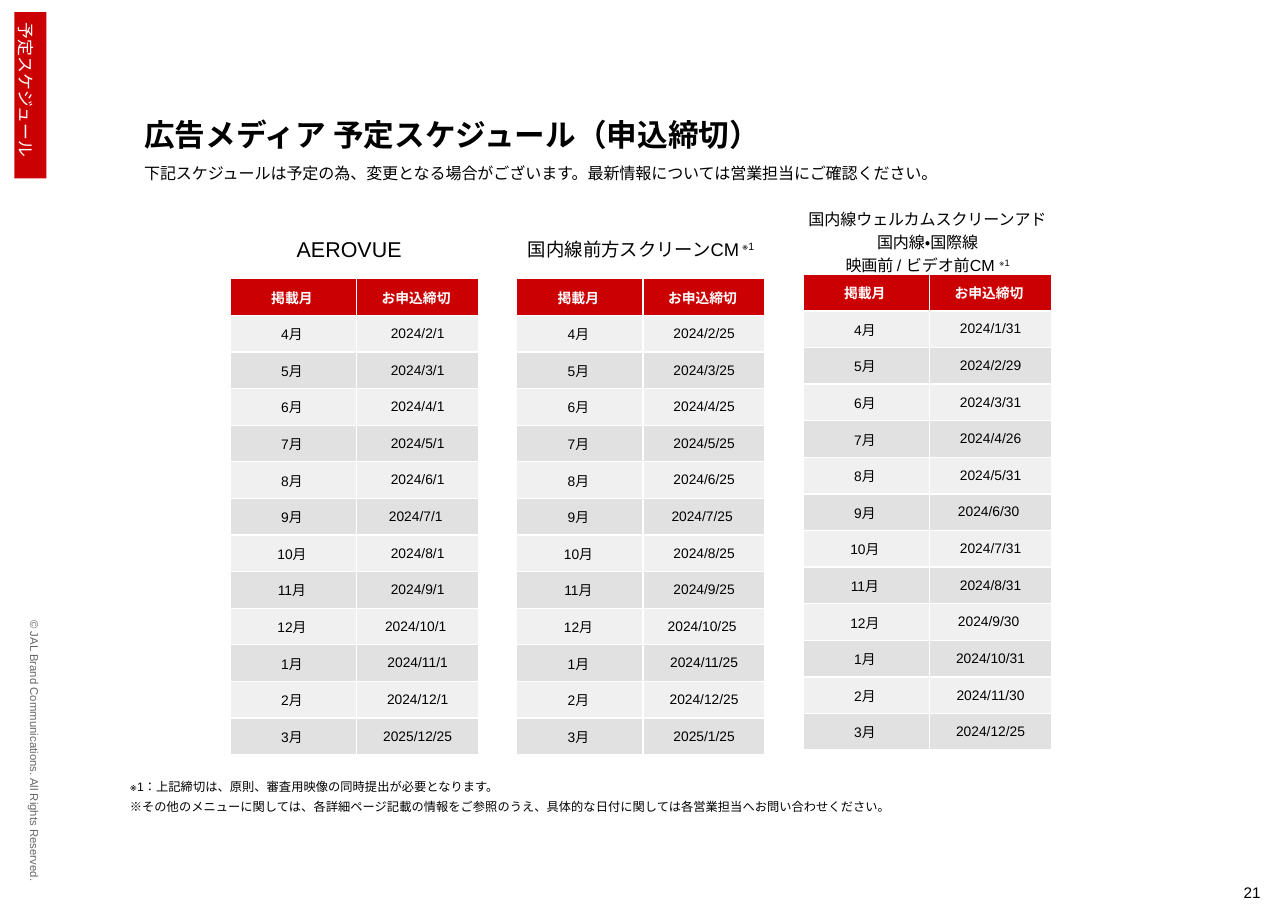
"""Builds the advertising media application deadline schedule slide."""
import pptx
import pptx.dml.color
import pptx.enum.lang
import pptx.enum.shapes
import pptx.enum.text
import pptx.oxml
import pptx.oxml.ns
import pptx.util

Pt = pptx.util.Pt
RGBColor = pptx.dml.color.RGBColor
ALIGN = pptx.enum.text.PP_ALIGN
ANCHOR = pptx.enum.text.MSO_ANCHOR
AUTO_SIZE = pptx.enum.text.MSO_AUTO_SIZE

RED = RGBColor(0xCB, 0x00, 0x03)
WHITE = RGBColor(0xFF, 0xFF, 0xFF)
BLACK = RGBColor(0x00, 0x00, 0x00)
GRAY = RGBColor(0x66, 0x66, 0x66)
BANDS = (RGBColor(0xF0, 0xF0, 0xF0), RGBColor(0xE1, 0xE1, 0xE1))

TABLE_LEFT = 150.5
TABLE_STEP = 187.2
COLUMN_WIDTHS = (82.6, 79.7)
ROW_HEIGHT = 23.93
HEADER = ("掲載月 ", "お申込締切 ")
MONTHS = [f"{month}月 " for month in (*range(4, 13), 1, 2, 3)]
MAGAZINE_DATES = (
    "2024/2/1", "2024/3/1", "2024/4/1", "2024/5/1", "2024/6/1", "2024/7/1 ",
    "2024/8/1", "2024/9/1", "2024/10/1 ", "2024/11/1", "2024/12/1", "2025/12/25")
FRONT_SCREEN_DATES = (
    "2024/2/25", "2024/3/25", "2024/4/25", "2024/5/25", "2024/6/25", "2024/7/25 ",
    "2024/8/25", "2024/9/25", "2024/10/25 ", "2024/11/25", "2024/12/25", "2025/1/25")
WELCOME_SCREEN_DATES = (
    "2024/1/31", "2024/2/29", "2024/3/31", "2024/4/26", "2024/5/31", "2024/6/30 ",
    "2024/7/31", "2024/8/31", "2024/9/30 ", "2024/10/31", "2024/11/30", "2024/12/25")
SCHEDULES = (
    (182.2, MAGAZINE_DATES),
    (182.2, FRONT_SCREEN_DATES),
    (179.3, WELCOME_SCREEN_DATES),
)


def add_run(paragraph, text, size, color=BLACK, bold=False, raised=False):
    run = paragraph.add_run()
    run.text = text
    run.font.name = "Arial"
    run.font.size = Pt(size)
    run.font.bold = bold
    run.font.color.rgb = color
    run.font.language_id = pptx.enum.lang.MSO_LANGUAGE_ID.JAPANESE
    if raised:
        run._r.get_or_add_rPr().set("baseline", "30000")


def place(shape, left, top, width, height):
    shape.left, shape.top = Pt(left), Pt(top)
    shape.width, shape.height = Pt(width), Pt(height)


def fill_frame(frame, lines, size, color=BLACK, bold=False, align=ALIGN.LEFT,
               spacing=1.0, anchor=ANCHOR.TOP, auto_size=AUTO_SIZE.SHAPE_TO_FIT_TEXT):
    frame.word_wrap = True
    frame.auto_size = auto_size
    frame.vertical_anchor = anchor
    for index, (text, mark) in enumerate(lines):
        paragraph = frame.add_paragraph() if index else frame.paragraphs[0]
        paragraph.alignment = align
        paragraph.line_spacing = spacing
        add_run(paragraph, text, size, color, bold)
        if mark:
            add_run(paragraph, mark, size, color, bold, raised=True)


def add_text(slide, box, lines, size, rotation=0, **style):
    text_box = slide.shapes.add_textbox(*map(Pt, box))
    text_box.rotation = rotation
    fill_frame(text_box.text_frame, lines, size, **style)


def add_title(slide, text):
    title = slide.shapes.title
    place(title, 87.1, 61.2, 494, 42.5)
    fill_frame(title.text_frame, [(text, "")], 20, bold=True, spacing=1.45)


def add_section_tab(slide, text):
    tab = slide.shapes.add_shape(
        pptx.enum.shapes.MSO_SHAPE.RECTANGLE, Pt(9.4), Pt(7.9), Pt(20.9), Pt(108.7))
    tab.shadow.inherit = False
    tab.fill.solid()
    tab.fill.fore_color.rgb = RED
    tab.line.fill.background()
    add_text(slide, (-34.6, 49, 108.7, 26.6), [(text, "")], 11,
             rotation=90, color=WHITE, spacing=1.45)


def add_borders(cell):
    properties = cell._tc.get_or_add_tcPr()
    for side in ("lnL", "lnR", "lnT", "lnB"):
        properties.append(pptx.oxml.parse_xml(
            f'<a:{side} {pptx.oxml.ns.nsdecls("a")} w="12700"><a:solidFill>'
            f'<a:srgbClr val="{WHITE}"/></a:solidFill></a:{side}>'))


def fill_cell(cell, text, fill, color, bold):
    add_borders(cell)
    cell.fill.solid()
    cell.fill.fore_color.rgb = fill
    cell.vertical_anchor = ANCHOR.MIDDLE
    paragraph = cell.text_frame.paragraphs[0]
    paragraph.alignment = ALIGN.CENTER
    add_run(paragraph, text, 9, color, bold)


def add_schedule(slide, left, top, dates):
    rows = [HEADER, *zip(MONTHS, dates)]
    schedule = slide.shapes.add_table(
        len(rows), len(HEADER), Pt(left), Pt(top),
        Pt(sum(COLUMN_WIDTHS)), Pt(ROW_HEIGHT * len(rows))).table
    for column, width in zip(schedule.columns, COLUMN_WIDTHS):
        column.width = Pt(width)
    for index, values in enumerate(rows):
        schedule.rows[index].height = Pt(ROW_HEIGHT)
        is_header = index == 0
        fill = RED if is_header else BANDS[(index - 1) % 2]
        for column, text in enumerate(values):
            fill_cell(schedule.cell(index, column), text, fill,
                      WHITE if is_header else BLACK, is_header)


def main():
    deck = pptx.Presentation()
    deck.slide_width, deck.slide_height = Pt(841.68), Pt(595.44)
    slide = deck.slides.add_slide(deck.slide_layouts[5])

    add_text(slide, (-101.5, 482.4, 247.7, 16.6),
             [("© JAL Brand Communications. All Rights Reserved.", "")], 7.4,
             rotation=90, color=GRAY, align=ALIGN.CENTER)
    add_title(slide, "広告メディア 予定スケジュール（申込締切）")
    add_text(slide, (87.1, 98.6, 573.1, 23.8),
             [("下記スケジュールは予定の為、変更となる場合がございます。"
               "最新情報については営業担当にご確認ください。", "")], 10.5, spacing=1.4)
    add_section_tab(slide, "予定スケジュール")

    add_text(slide, (151.9, 143.3, 152.6, 29.5), [("AEROVUE", "")], 14,
             align=ALIGN.CENTER, spacing=1.45)
    add_text(slide, (328.3, 145.4, 181.4, 26.6), [("国内線前方スクリーンCM", " ※1")], 12,
             align=ALIGN.CENTER, spacing=1.45)
    add_text(slide, (515.5, 131, 181.4, 53.3),
             [("国内線ウェルカムスクリーンアド", ""), ("国内線・国際線", ""),
              ("映画前 / ビデオ前CM ", "※1")], 10.5, align=ALIGN.CENTER, spacing=1.2)
    for index, (top, dates) in enumerate(SCHEDULES):
        add_schedule(slide, TABLE_LEFT + index * TABLE_STEP, top, dates)

    add_text(slide, (77.8, 501.8, 647.3, 34.6),
             [("※1：上記締切は、原則、審査用映像の同時提出が必要となります。", ""),
              ("※その他のメニューに関しては、各詳細ページ記載の情報をご参照のうえ、"
               "具体的な日付に関しては各営業担当へお問い合わせください。", "")], 8, spacing=1.4)
    add_text(slide, (761.8, 567.4, 69.1, 31.7), [("21", "")], 10, align=ALIGN.RIGHT,
             anchor=ANCHOR.MIDDLE, auto_size=AUTO_SIZE.NONE)
    deck.save("out.pptx")


if __name__ == "__main__":
    main()
